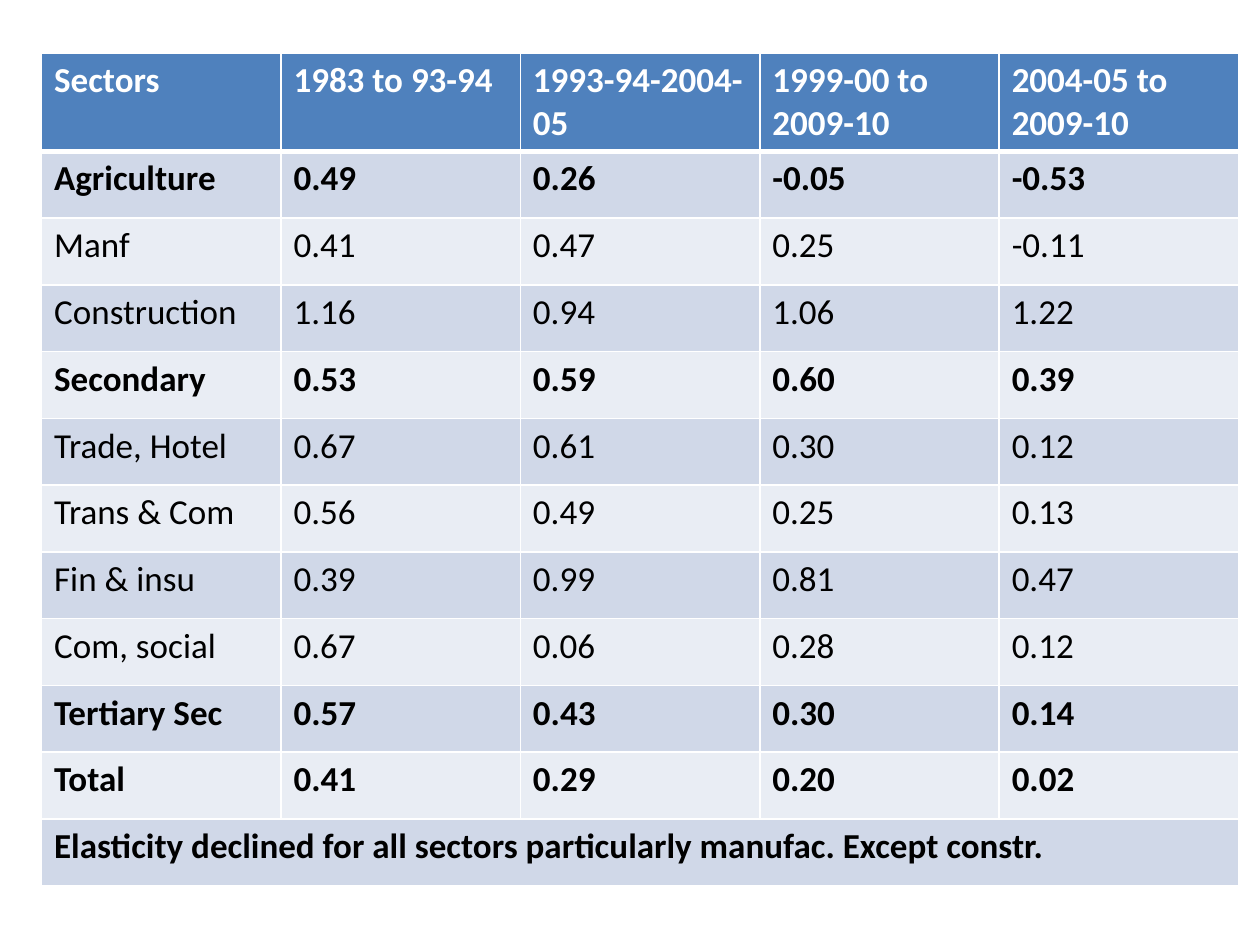
"""Build a slide with a table of employment elasticity by sector and period."""
from lxml import etree
from pptx import Presentation
from pptx.dml.color import RGBColor
from pptx.oxml.ns import qn
from pptx.util import Inches, Pt

COLORS = {"header": "4F81BD", "odd": "D0D8E8", "even": "E9EDF4",
          "line": "FFFFFF", "header_text": "FFFFFF", "text": "000000"}
FONT = "Calibri"
COL_W, HEADER_H, ROW_H = 1.9, 0.77, 0.53
BOLD_SECTORS = {"Agriculture", "Secondary", "Tertiary Sec", "Total"}
ROWS = [
    ["Sectors", "1983 to 93-94", "1993-94-2004-05", "1999-00 to 2009-10", "2004-05 to 2009-10"],
    ["Agriculture", "0.49", "0.26", "-0.05", "-0.53"],
    ["Manf", "0.41", "0.47", "0.25", "-0.11"],
    ["Construction", "1.16", "0.94", "1.06", "1.22"],
    ["Secondary", "0.53", "0.59", "0.60", "0.39"],
    ["Trade, Hotel", "0.67", "0.61", "0.30", "0.12"],
    ["Trans & Com", "0.56", "0.49", "0.25", "0.13"],
    ["Fin & insu", "0.39", "0.99", "0.81", "0.47"],
    ["Com, social", "0.67", "0.06", "0.28", "0.12"],
    ["Tertiary Sec", "0.57", "0.43", "0.30", "0.14"],
    ["Total", "0.41", "0.29", "0.20", "0.02"],
    ["Elasticity declined for all sectors particularly manufac. Except constr."],
]


def add_border(cell, side, width):
    tcPr = cell._tc.get_or_add_tcPr()
    ln = etree.SubElement(tcPr, qn(f"a:ln{side}"), w=str(Pt(width)))
    fill = etree.SubElement(ln, qn("a:solidFill"))
    etree.SubElement(fill, qn("a:srgbClr"), val=COLORS["line"])


prs = Presentation()
prs.slide_width, prs.slide_height = Inches(10), Inches(7.5)
s = prs.slides.add_slide(prs.slide_layouts[6])

n_rows, n_cols = len(ROWS), len(ROWS[0])
height = HEADER_H + ROW_H * (n_rows - 1)
table = s.shapes.add_table(n_rows, n_cols, Inches(0.33), Inches(0.42),
                           Inches(COL_W * n_cols), Inches(height)).table
for col in table.columns:
    col.width = Inches(COL_W)
table.cell(n_rows - 1, 0).merge(table.cell(n_rows - 1, n_cols - 1))

for i, values in enumerate(ROWS):
    table.rows[i].height = Inches(ROW_H if i else HEADER_H)
    band = "header" if i == 0 else "odd" if i % 2 else "even"
    bold = i in (0, n_rows - 1) or values[0] in BOLD_SECTORS
    for j in range(n_cols):
        cell = table.cell(i, j)
        for side in "LRTB":
            add_border(cell, side, 3 if (i, side) in ((0, "B"), (1, "T")) else 1)
        cell.fill.solid()
        cell.fill.fore_color.rgb = RGBColor.from_string(COLORS[band])
        if j < len(values):
            cell.text_frame.text = values[j]
            font = cell.text_frame.paragraphs[0].runs[0].font
            font.name, font.size, font.bold = FONT, Pt(20), bold
            font.color.rgb = RGBColor.from_string(COLORS["text" if i else "header_text"])

prs.save("out.pptx")
